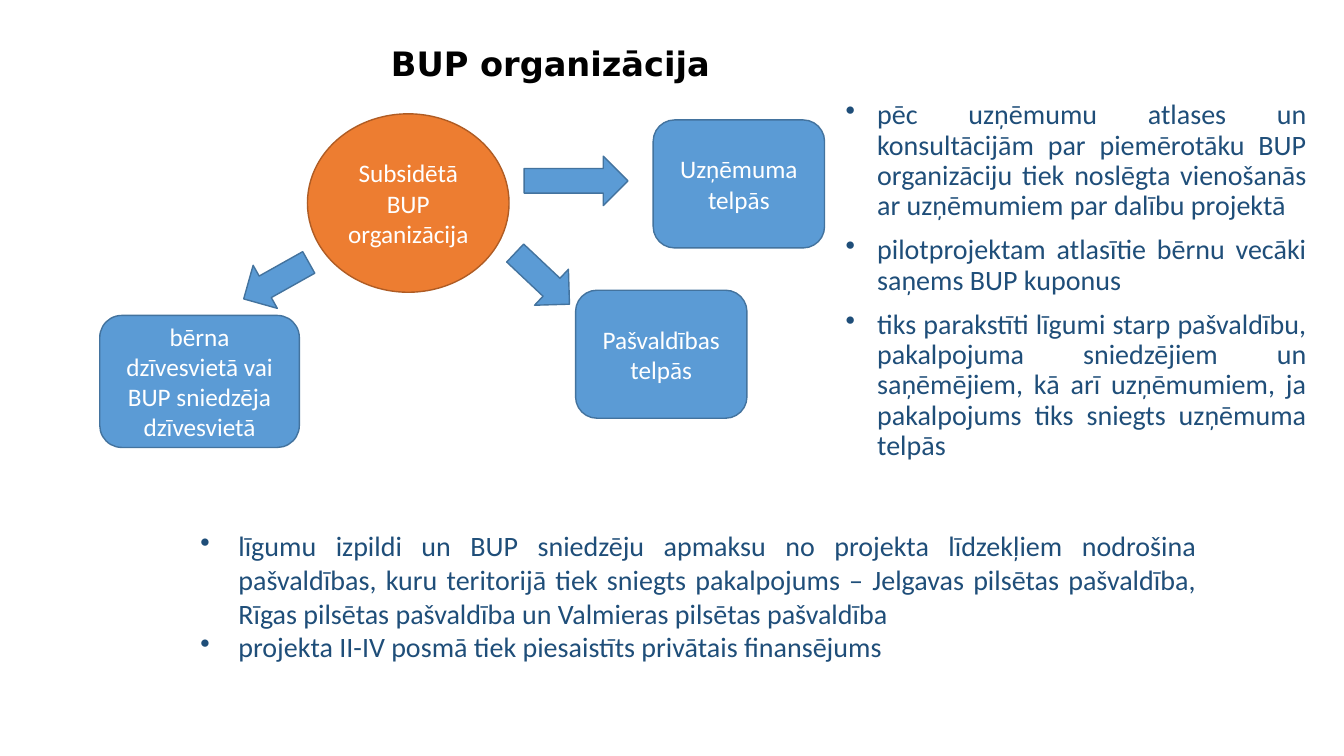
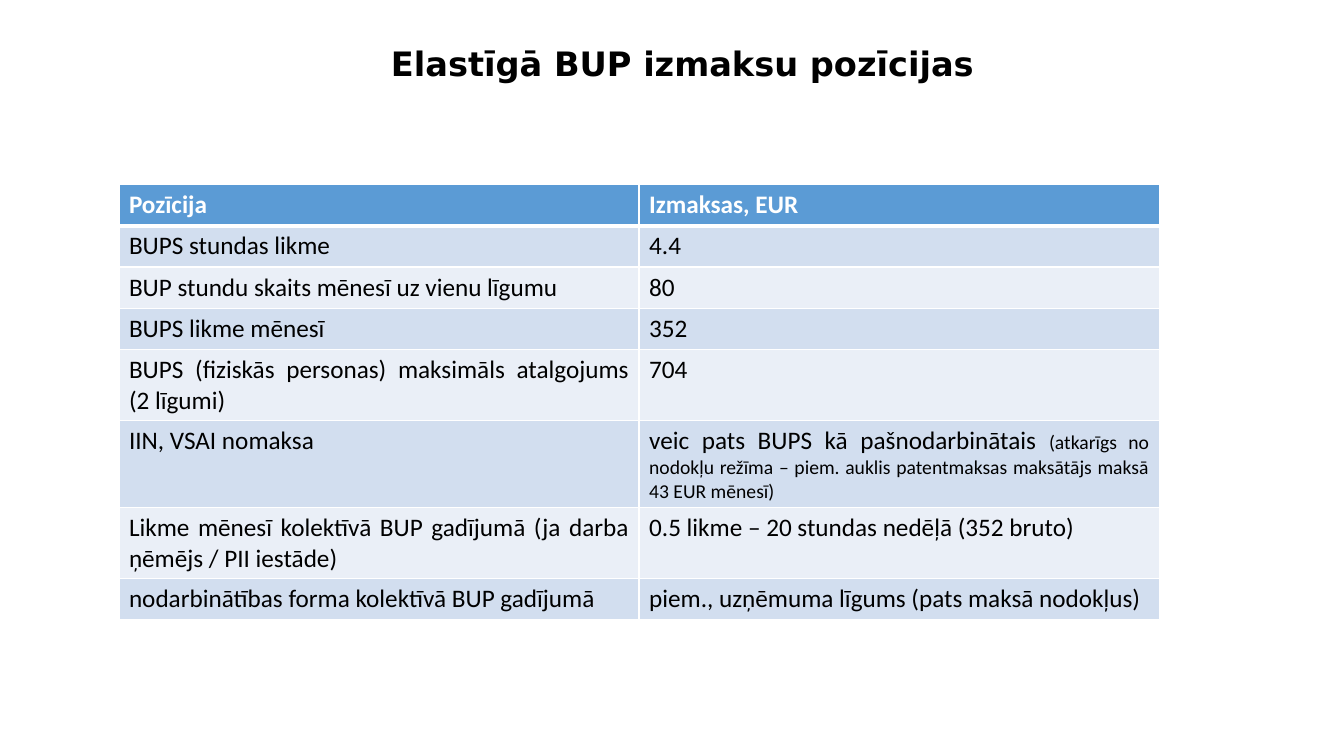
from dataclasses import dataclass

from lxml.etree import SubElement
from pptx import Presentation
from pptx.dml.color import RGBColor
from pptx.enum.shapes import MSO_SHAPE
from pptx.enum.text import MSO_ANCHOR, PP_ALIGN
from pptx.oxml.ns import qn
from pptx.util import Inches, Pt


@dataclass(frozen=True)
class Theme:
    black: str = "000000"
    white: str = "FFFFFF"
    navy: str = "1F4E79"
    blue: str = "5B9BD5"
    blue_edge: str = "43739E"
    orange: str = "ED7D31"
    orange_edge: str = "AF5C24"
    dark_band: str = "D2DEEF"
    light_band: str = "EAEFF7"
    title_font: str = "DejaVu Sans"
    text_font: str = "Calibri"
    title_size: int = 24
    bullet_size: int = 20
    label_size: int = 18
    note_size: int = 14


theme = Theme()
presentation = Presentation()
presentation.slide_width, presentation.slide_height = Inches(13.33), Inches(7.5)
unit = presentation.slide_width / 40  # square grid, 40 columns wide


def grid(*lengths):
    """Turn grid columns and rows into slide lengths."""
    return [round(length * unit) for length in lengths]


def write(paragraph, text, colour, size=theme.label_size, bold=False,
          name=theme.text_font, alignment=PP_ALIGN.JUSTIFY):
    paragraph.alignment = alignment
    run = paragraph.add_run()
    run.text = text
    for attribute, value in {"size": Pt(size), "bold": bold, "name": name}.items():
        setattr(run.font, attribute, value)
    run.font.color.rgb = RGBColor.from_string(colour)


# Slides and their titles
slides = []
for title in ("BUP organizācija", "Elastīgā BUP izmaksu pozīcijas"):
    slide = presentation.slides.add_slide(presentation.slide_layouts[6])
    frame = slide.shapes.add_textbox(*grid(11.34, 1.26, 26.67, 1.95)).text_frame
    frame.word_wrap = True
    frame.paragraphs[0].line_spacing = 0.9
    write(frame.paragraphs[0], title, theme.black, theme.title_size, True,
          theme.title_font, PP_ALIGN.LEFT)
    slides.append(slide)
organisation_slide, cost_slide = slides

# Organisation diagram
box, arrow = MSO_SHAPE.FLOWCHART_ALTERNATE_PROCESS, MSO_SHAPE.RIGHT_ARROW
diagram = [
    (box, (19.44, 3.57, 5.1, 3.81), 0, "Uzņēmuma telpās"),
    (box, (17.13, 8.64, 5.1, 3.81), 0, "Pašvaldības telpās"),
    (MSO_SHAPE.OVAL, (9.15, 3.39, 6, 5.31), 0, "Subsidētā BUP organizācija"),
    (box, (2.97, 9.39, 5.94, 3.93), 0,
     "bērna dzīvesvietā vai BUP sniedzēja dzīvesvietā"),
    (arrow, (15.6, 4.65, 3.09, 1.47), 0, ""),
    (arrow, (15.03, 7.56, 2.22, 1.47), 43.3, ""),
    (arrow, (7.11, 7.62, 2.22, 1.47), 150.7, ""),
]
for kind, place, rotation, label in diagram:
    shape = organisation_slide.shapes.add_shape(kind, *grid(*place))
    is_centre = kind == MSO_SHAPE.OVAL
    fill = theme.orange if is_centre else theme.blue
    edge = theme.orange_edge if is_centre else theme.blue_edge
    shape.rotation = rotation
    shape.shadow.inherit = False
    shape.fill.solid()
    shape.fill.fore_color.rgb = RGBColor.from_string(fill)
    shape.line.color.rgb = RGBColor.from_string(edge)
    shape.line.width = Pt(1)
    if label:
        shape.text_frame.word_wrap = True
        shape.text_frame.vertical_anchor = MSO_ANCHOR.MIDDLE
        write(shape.text_frame.paragraphs[0], label, theme.white,
              alignment=PP_ALIGN.CENTER)

# Bullet lists: place, indent, line spacing, space between paragraphs, items
bullet_lists = [
    ((24.87, 2.85, 14.31, 9.48), 0.94, 0.9, 10, [
        "pēc uzņēmumu atlases un konsultācijām par piemērotāku BUP organizāciju "
        "tiek noslēgta vienošanās ar uzņēmumiem par dalību projektā",
        "pilotprojektam atlasītie bērnu vecāki saņems BUP kuponus",
        "tiks parakstīti līgumi starp pašvaldību, pakalpojuma sniedzējiem un "
        "saņēmējiem, kā arī uzņēmumiem, ja pakalpojums tiks sniegts uzņēmuma telpās",
    ]),
    ((5.67, 15.6, 30.24, 4.35), 1.13, 1.0, 0, [
        "līgumu izpildi un BUP sniedzēju apmaksu no projekta līdzekļiem nodrošina "
        "pašvaldības, kuru teritorijā tiek sniegts pakalpojums – Jelgavas pilsētas "
        "pašvaldība, Rīgas pilsētas pašvaldība un Valmieras pilsētas pašvaldība",
        "projekta II-IV posmā tiek piesaistīts privātais finansējums",
    ]),
]
for place, indent, line_spacing, gap, items in bullet_lists:
    frame = organisation_slide.shapes.add_textbox(*grid(*place)).text_frame
    frame.word_wrap = True
    [hang] = grid(indent)
    for index, item in enumerate(items):
        paragraph = frame.add_paragraph() if index else frame.paragraphs[0]
        properties = paragraph._p.get_or_add_pPr()
        properties.set("marL", str(hang))
        properties.set("indent", str(-hang))
        SubElement(properties, qn("a:buChar"), char="•")
        paragraph.line_spacing = line_spacing
        paragraph.space_before = Pt(gap if index else 0)
        write(paragraph, item, theme.navy, theme.bullet_size)

# Cost table: a third entry is a smaller note after the cost
costs = [
    ("Pozīcija", "Izmaksas, EUR"),
    ("BUPS stundas likme", "4.4"),
    ("BUP stundu skaits mēnesī uz vienu līgumu", "80"),
    ("BUPS likme mēnesī", "352"),
    ("BUPS (fiziskās personas) maksimāls atalgojums (2 līgumi)", "704"),
    ("IIN, VSAI nomaksa", "veic pats BUPS kā pašnodarbinātais ",
     "(atkarīgs no nodokļu režīma – piem. auklis patentmaksas maksātājs maksā "
     "43 EUR mēnesī)"),
    ("Likme mēnesī kolektīvā BUP gadījumā (ja darba ņēmējs / PII iestāde)",
     "0.5 likme – 20 stundas nedēļā (352 bruto)"),
    ("nodarbinātības forma kolektīvā BUP gadījumā",
     "piem., uzņēmuma līgums (pats maksā nodokļus)"),
]
table = cost_slide.shapes.add_table(
    len(costs), 2, *grid(3.54, 5.49, 30.96, 1.23 * len(costs))).table
for row, (position, cost, *notes) in enumerate(costs):
    is_header = row == 0
    band = theme.dark_band if row % 2 else theme.light_band
    for column, text in enumerate((position, cost)):
        cell = table.cell(row, column)
        properties = cell._tc.get_or_add_tcPr()
        for side in ("L", "R", "T", "B"):
            heavy = (is_header and side == "B") or (row == 1 and side == "T")
            border = SubElement(properties, qn(f"a:ln{side}"),
                                w=str(Pt(3 if heavy else 1)))
            border_fill = SubElement(border, qn("a:solidFill"))
            SubElement(border_fill, qn("a:srgbClr"), val=theme.white)
        cell.fill.solid()
        cell.fill.fore_color.rgb = RGBColor.from_string(
            theme.blue if is_header else band)
        write(cell.text_frame.paragraphs[0], text,
              theme.white if is_header else theme.black, bold=is_header)
    for note in notes:
        write(cell.text_frame.paragraphs[0], note, theme.black, theme.note_size)

presentation.save("out.pptx")
